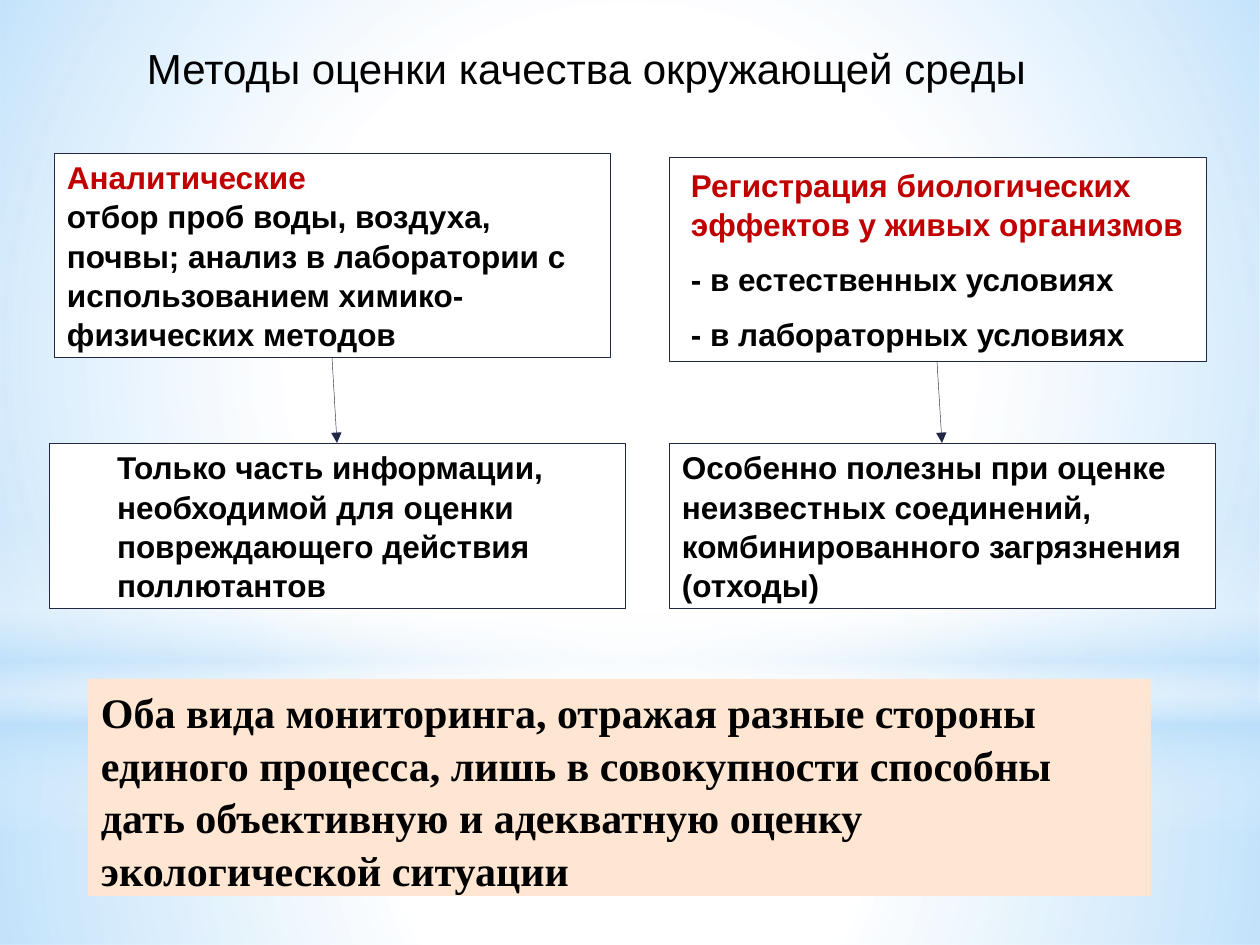
import pptx
import pptx.dml.color
import pptx.enum.shapes
import pptx.enum.text
import pptx.oxml
import pptx.oxml.ns
import pptx.util

PX = pptx.util.Inches(1) / 126
COLORS = {"white": "FFFFFF", "sky": "B4DCFA", "navy": "212745",
          "red": "C00000", "black": "000000", "peach": "FFE6D3"}
RGB = {name: pptx.dml.color.RGBColor.from_string(value) for name, value in COLORS.items()}
SHAPE = pptx.enum.shapes.MSO_SHAPE
ANCHOR = pptx.enum.text.MSO_ANCHOR


def write_text(frame, paragraphs, font="Arial", size=18, bold=True, gap=0,
               left=13, anchor=ANCHOR.MIDDLE, wrap=True):
    frame.word_wrap = wrap
    frame.auto_size = pptx.enum.text.MSO_AUTO_SIZE.NONE
    frame.vertical_anchor = anchor
    frame.margin_left = round(left * PX)
    frame.margin_right = round(12 * PX)
    frame.margin_top = frame.margin_bottom = round(6 * PX)
    for index, (text, color) in enumerate(paragraphs):
        paragraph = frame.add_paragraph() if index else frame.paragraphs[0]
        paragraph.alignment = pptx.enum.text.PP_ALIGN.LEFT
        paragraph.line_spacing = 1.04
        paragraph.space_before = pptx.util.Pt(gap if index else 0)
        run = paragraph.add_run()
        run.text = text
        run.font.name = font
        run.font.size = pptx.util.Pt(size)
        run.font.bold = bold
        run.font.color.rgb = RGB[color]


def fill_gradient(shape, stops, direction):
    stop_xml = "".join(
        f'<a:gs pos="{position * 1000}"><a:srgbClr val="{COLORS[color]}">'
        f'<a:alpha val="{alpha * 1000}"/></a:srgbClr></a:gs>'
        for position, color, alpha in stops)
    gradient = pptx.oxml.parse_xml(
        f'<a:gradFill {pptx.oxml.ns.nsdecls("a")} rotWithShape="1">'
        f'<a:gsLst>{stop_xml}</a:gsLst>{direction}</a:gradFill>')
    shape.fill.background()
    empty_fill = shape._element.spPr.find(pptx.oxml.ns.qn("a:noFill"))
    shape._element.spPr.replace(empty_fill, gradient)


presentation = pptx.Presentation()
presentation.slide_width = round(1260 * PX)
presentation.slide_height = round(945 * PX)
slide = presentation.slides.add_slide(presentation.slide_layouts[5])
shapes = slide.shapes

# Sky background
slide.background.fill.solid()
slide.background.fill.fore_color.rgb = RGB["white"]
RADIAL = '<a:path path="circle"><a:fillToRect l="50000" t="50000" r="50000" b="50000"/></a:path>'
VERTICAL = '<a:lin ang="5400000" scaled="0"/>'
sky_layers = [
    (SHAPE.RECTANGLE, 703, 242, RADIAL,
     [(0, "white", 91), (37, "white", 76), (100, "sky", 79)]),
    (SHAPE.RECTANGLE, 0, 703, RADIAL,
     [(0, "white", 89), (48, "white", 62), (100, "sky", 79)]),
    (SHAPE.RECTANGLE, 519, 315, VERTICAL,
     [(0, "white", 0), (29, "white", 30), (45, "sky", 40),
      (55, "white", 26), (65, "sky", 60), (100, "white", 0)]),
    (SHAPE.OVAL, 220, 703, RADIAL, [(0, "white", 100), (56, "white", 0)]),
]
for kind, top, height, direction, stops in sky_layers:
    layer = shapes.add_shape(kind, 0, round(top * PX), round(1260 * PX), round(height * PX))
    layer.shadow.inherit = False
    layer.line.fill.background()
    fill_gradient(layer, stops, direction)

# Title, brought in front of the background
title = shapes.title
title.left, title.top, title.width, title.height = (round(n * PX) for n in (134, 35, 910, 63))
write_text(title.text_frame, [("Методы оценки качества окружающей среды", "black")],
           size=24, bold=False, wrap=False)
shapes._spTree.append(title._element)

# Methods, their assessments and the conclusion
blocks = [
    ((669, 157, 537, 204), "white",
     [("Регистрация биологических эффектов у живых организмов", "red"),
      ("- в естественных условиях", "black"),
      ("- в лабораторных условиях", "black")], {"gap": 9, "left": 22}),
    ((49, 443, 576, 165), "white",
     [("Только часть информации, необходимой для оценки повреждающего действия "
       "поллютантов", "black")], {"left": 68}),
    ((54, 153, 556, 204), "white",
     [("Аналитические", "red"),
      ("отбор проб воды, воздуха, почвы; анализ в лаборатории с использованием "
       "химико-физических методов", "black")], {}),
    ((669, 443, 546, 165), "white",
     [("Особенно полезны при оценке неизвестных соединений, комбинированного "
       "загрязнения (отходы)", "black")], {}),
    ((88, 679, 1063, 217), "peach",
     [("Оба вида мониторинга, отражая разные стороны единого процесса, лишь в "
       "совокупности способны дать объективную и адекватную оценку экологической "
       "ситуации", "black")],
     {"font": "Times New Roman", "size": 24, "anchor": ANCHOR.TOP}),
]
for box, fill, paragraphs, text_format in blocks:
    block = shapes.add_shape(SHAPE.RECTANGLE, *(round(n * PX) for n in box))
    block.shadow.inherit = False
    block.fill.solid()
    block.fill.fore_color.rgb = RGB[fill]
    if fill == "white":
        block.line.color.rgb = RGB["navy"]
        block.line.width = pptx.util.Pt(0.25)
    else:
        block.line.fill.background()
    write_text(block.text_frame, paragraphs, **text_format)

# Arrows from each method to its assessment
for ends in [(332, 357, 337, 443), (937, 361, 942, 443)]:
    arrow = shapes.add_connector(pptx.enum.shapes.MSO_CONNECTOR.STRAIGHT,
                                 *(round(n * PX) for n in ends))
    arrow.line.color.rgb = RGB["navy"]
    arrow.line.width = pptx.util.Pt(0.25)
    arrow.line._get_or_add_ln().append(pptx.oxml.parse_xml(
        f'<a:tailEnd {pptx.oxml.ns.nsdecls("a")} type="triangle"/>'))
    arrow._element.spPr.append(pptx.oxml.parse_xml(
        f'<a:effectLst {pptx.oxml.ns.nsdecls("a")}/>'))

presentation.save("out.pptx")
